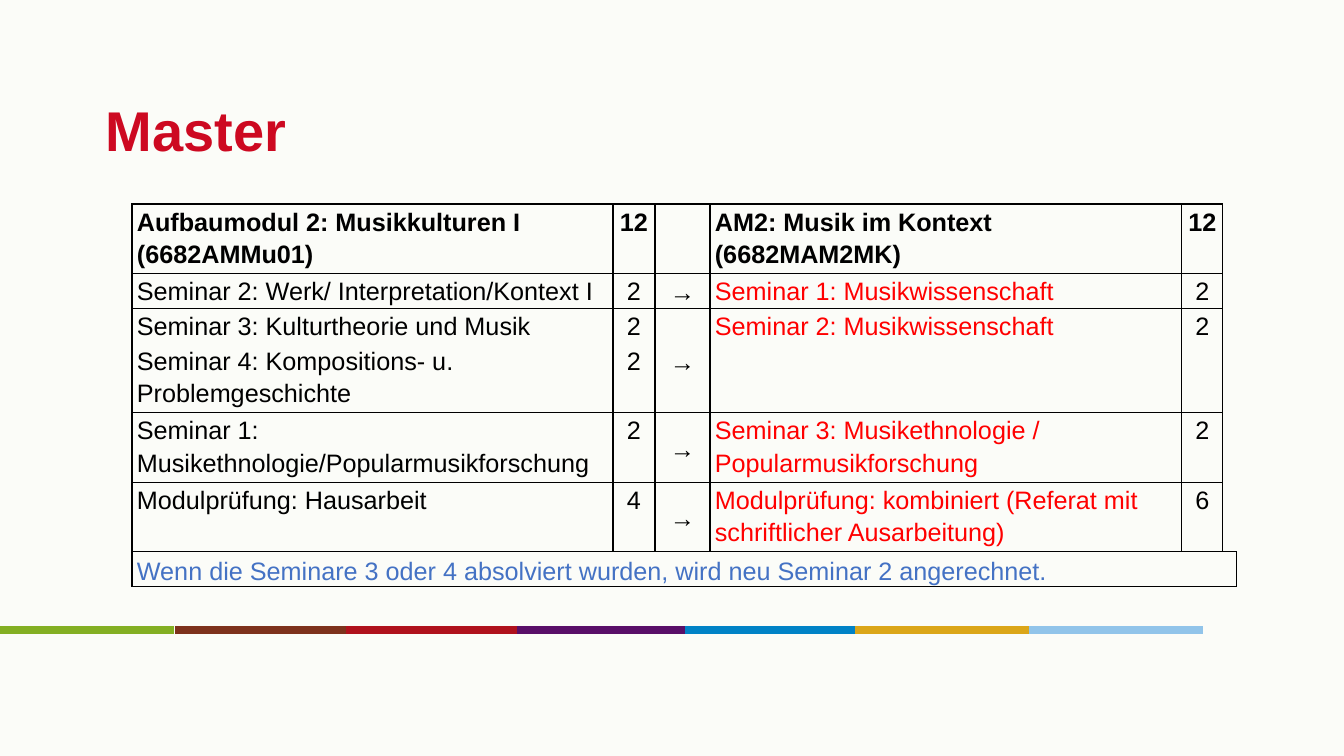
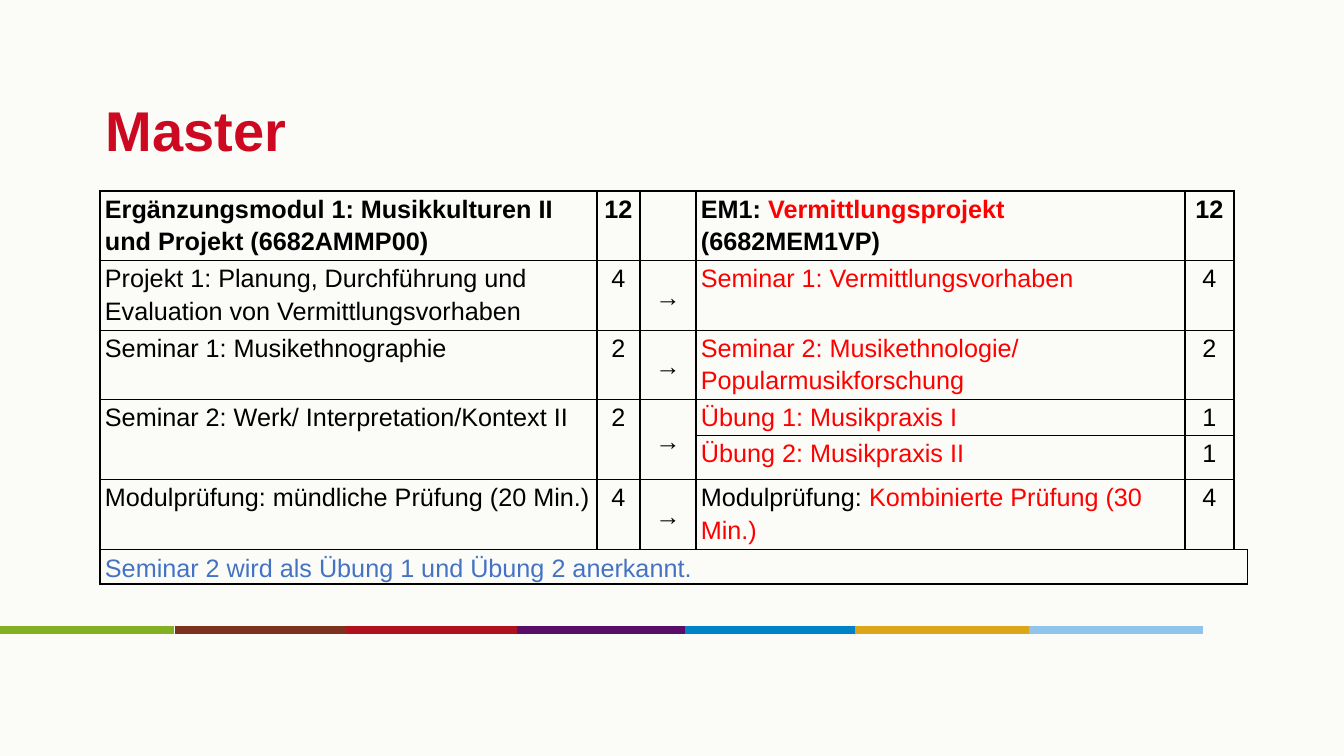
from lxml.etree import SubElement
from pptx import Presentation
from pptx.dml.color import RGBColor
from pptx.enum.shapes import MSO_CONNECTOR as Connector
from pptx.enum.text import MSO_ANCHOR as Anchor, PP_ALIGN as Align
from pptx.oxml.ns import qn
from pptx.util import Emu, Pt

SLIDE_WIDTH, SLIDE_HEIGHT = 1344, 756
EMU_PER_PX = 12192000 / SLIDE_WIDTH
FONT = "Arial"
COLORS = {
    "paper": "FBFCF8", "title": "CD0921", "ink": "000000",
    "new": "FF0000", "note": "4472C4",
    "green": "83AF23", "brown": "7D321D", "red": "AF111D",
    "purple": "590F68", "blue": "0082C6", "gold": "DBA619", "sky": "91C4EA",
}

# Shared layout
TITLE_BOX = (101, 66, 1142, 126)
INSET = 5
BAND_Y, BAND_LENGTH = 630, 174
BAND_STARTS = {"green": 0, "brown": 175, "red": 346, "purple": 517,
               "blue": 685, "gold": 855, "sky": 1029}

# Rows: old course, points, arrow, new course, points
MUSIC_CULTURES = {
    "origin": (132, 204),
    "columns": [481, 42, 55, 472, 41, 14],
    "heights": [64, 32, 33, 65, 65, 65, 33],
    "merges": [(2, 2), (2, 3), (2, 4)],
    "open_seams": [(2, 0), (2, 1)],
    "rows": [
        ("Aufbaumodul 2: Musikkulturen I (6682AMMu01)", "12", "",
         [("AM2: Musik im Kontext (6682MAM2MK)", "ink")], "12"),
        ("Seminar 2: Werk/ Interpretation/Kontext I", "2", "→",
         "Seminar 1: Musikwissenschaft", "2"),
        ("Seminar 3: Kulturtheorie und Musik", "2", "→",
         "Seminar 2: Musikwissenschaft", "2"),
        ("Seminar 4: Kompositions- u. Problemgeschichte", "2", "", "", ""),
        ("Seminar 1: Musikethnologie/Popularmusikforschung", "2", "→",
         "Seminar 3: Musikethnologie / Popularmusikforschung", "2"),
        ("Modulprüfung: Hausarbeit", "4", "→",
         "Modulprüfung: kombiniert (Referat mit schriftlicher Ausarbeitung)", "6"),
    ],
    "note": "Wenn die Seminare 3 oder 4 absolviert wurden, wird neu Seminar 2 angerechnet.",
}
PROJECT = {
    "origin": (100, 191),
    "columns": [497, 43, 56, 489, 49, 14],
    "heights": [67, 66, 67, 36, 44, 66, 33],
    "merges": [(3, 0), (3, 1), (3, 2)],
    "open_seams": [],
    "rows": [
        ("Ergänzungsmodul 1: Musikkulturen II und Projekt (6682AMMP00)", "12", "",
         [("EM1: ", "ink"), ("Vermittlungsprojekt", "new"),
          (" (6682MEM1VP)", "ink")], "12"),
        ("Projekt 1: Planung, Durchführung und Evaluation von Vermittlungsvorhaben",
         "4", "→", "Seminar 1: Vermittlungsvorhaben", "4"),
        ("Seminar 1: Musikethnographie", "2", "→",
         "Seminar 2: Musikethnologie/ Popularmusikforschung", "2"),
        ("Seminar 2: Werk/ Interpretation/Kontext II", "2", "→",
         "Übung 1: Musikpraxis I", "1"),
        ("", "", "", "Übung 2: Musikpraxis II", "1"),
        ("Modulprüfung: mündliche Prüfung (20 Min.)", "4", "→",
         [("Modulprüfung: ", "ink"), ("Kombinierte Prüfung (30 Min.)", "new")], "4"),
    ],
    "note": "Seminar 2 wird als Übung 1 und Übung 2 anerkannt.",
}


def px(length):
    return Emu(round(length * EMU_PER_PX))


def rgb(name):
    return RGBColor.from_string(COLORS[name])


def write_text(text_frame, text, *, size=18, color="ink", bold=False,
               align=Align.LEFT, line_spacing=None, space_after=None):
    """Write a string, or a list of (string, colour) runs, as one paragraph."""
    paragraph = text_frame.paragraphs[0]
    paragraph.alignment = align
    paragraph.line_spacing = line_spacing
    paragraph.space_after = space_after
    for part, part_color in [(text, color)] if isinstance(text, str) else text:
        run = paragraph.add_run()
        run.text = part
        run.font.name, run.font.size, run.font.bold = FONT, Pt(size), bold
        run.font.color.rgb = rgb(part_color)


def add_title(slide, text, box):
    shape = slide.shapes.add_textbox(*map(px, box))
    frame = shape.text_frame
    frame.word_wrap = True
    frame.vertical_anchor = Anchor.MIDDLE
    frame.margin_left = frame.margin_right = px(INSET)
    frame.margin_top = frame.margin_bottom = px(INSET)
    write_text(frame, text, size=40, color="title", bold=True)


def add_color_band(slide, y):
    for color, start in BAND_STARTS.items():
        line = slide.shapes.add_connector(
            Connector.STRAIGHT, px(start), px(y), px(start + BAND_LENGTH), px(y))
        line.line.color.rgb = rgb(color)
        line.line.width = Pt(5.5)
        SubElement(line._element.spPr, qn("a:effectLst"))


def set_borders(cell, sides):
    """Draw the named sides (L, R, T, B) and clear the others."""
    properties = cell._tc.get_or_add_tcPr()
    for side in "LRTB":
        border = SubElement(properties, qn(f"a:ln{side}"), w=str(Pt(1)))
        if side in sides:
            fill = SubElement(border, qn("a:solidFill"))
            SubElement(fill, qn("a:srgbClr"), val=COLORS["ink"])
        else:
            SubElement(border, qn("a:noFill"))


def cell_sides(row, column, module):
    last_row = len(module["rows"])
    if row < last_row and column == len(module["columns"]) - 1:
        return "LB" if row == last_row - 1 else "L"
    sides = "LRTB"
    if (row, column) in module["open_seams"]:
        sides = sides.replace("B", "")
    if (row - 1, column) in module["open_seams"]:
        sides = sides.replace("T", "")
    return sides


def add_module_table(slide, module):
    columns, heights = module["columns"], module["heights"]
    left, top = module["origin"]
    table = slide.shapes.add_table(
        len(heights), len(columns), px(left), px(top),
        px(sum(columns)), px(sum(heights))).table
    table.first_row = table.horz_banding = False
    for column, width in zip(table.columns, columns):
        column.width = px(width)
    for row, height in zip(table.rows, heights):
        row.height = px(height)

    # Merged cells
    for row, column in module["merges"]:
        table.cell(row, column).merge(table.cell(row + 1, column))
    note_row = len(heights) - 1
    table.cell(note_row, 0).merge(table.cell(note_row, len(columns) - 1))

    # Cell frames and text
    for row, texts in enumerate(module["rows"] + [(module["note"],)]):
        for column in range(len(columns)):
            cell = table.cell(row, column)
            cell.margin_left = cell.margin_right = px(INSET)
            cell.margin_top = cell.margin_bottom = 0
            set_borders(cell, cell_sides(row, column, module))
            cell.fill.background()
            if column >= len(texts) or not texts[column]:
                continue
            if column == 2 or row == note_row:
                cell.vertical_anchor = Anchor.MIDDLE
            color = "note" if row == note_row else "new" if column == 3 else "ink"
            write_text(cell.text_frame, texts[column], color=color, bold=row == 0,
                       align=Align.CENTER if column in (1, 2, 4) else Align.LEFT,
                       line_spacing=1.15, space_after=Pt(10))


def add_module_slide(presentation, module):
    slide = presentation.slides.add_slide(presentation.slide_layouts[6])
    add_color_band(slide, BAND_Y)
    add_title(slide, "Master", TITLE_BOX)
    add_module_table(slide, module)


def main():
    presentation = Presentation()
    presentation.slide_width, presentation.slide_height = px(SLIDE_WIDTH), px(SLIDE_HEIGHT)
    background = presentation.slide_master.background.fill
    background.solid()
    background.fore_color.rgb = rgb("paper")
    for module in (MUSIC_CULTURES, PROJECT):
        add_module_slide(presentation, module)
    presentation.save("out.pptx")


if __name__ == "__main__":
    main()
